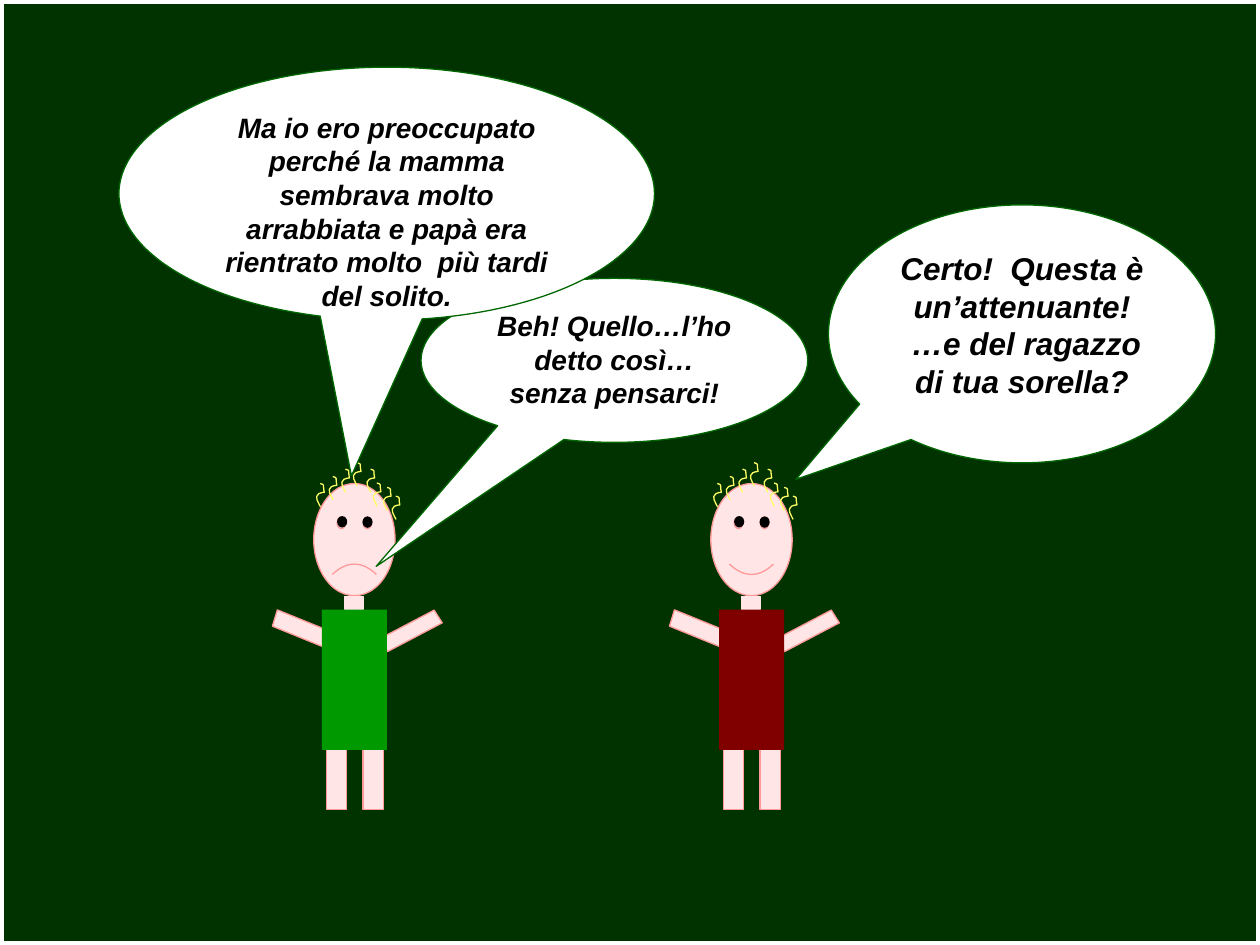
from lxml.etree import SubElement
from pptx import Presentation
from pptx.dml.color import RGBColor
from pptx.enum.shapes import MSO_SHAPE
from pptx.enum.text import MSO_ANCHOR, PP_ALIGN
from pptx.oxml.ns import qn
from pptx.util import Pt

THEME = {
    "background": "003300", "border": "FFFFFF", "skin": "FFE5E5", "skin_line": "FF9999",
    "eye": "000000", "hair": "FFFF66", "bubble": "FFFFFF", "bubble_line": "006600",
    "text": "000000", "green_shirt": "009900", "red_shirt": "800000",
    "font": "Arial", "large": 18, "medium": 16, "thin": 0.75, "thick": 4.5,
}

SLIDE_SIZE = (720, 540)

CHILDREN = [
    {"left": 166.9, "smile": -0.047, "shirt": "green_shirt"},
    {"left": 393.8, "smile": 0.047, "shirt": "red_shirt"},
]

BODY = [
    {"kind": MSO_SHAPE.PARALLELOGRAM, "box": (62.1, 342.9, 11.5, 35.3), "rotation": 57.6},
    {"kind": MSO_SHAPE.PARALLELOGRAM, "box": (0.1, 342.2, 13, 35.3), "rotation": 106.9},
    {"kind": MSO_SHAPE.RECTANGLE, "box": (19.6, 421.2, 11.6, 41.6)},
    {"kind": MSO_SHAPE.RECTANGLE, "box": (40.5, 421.2, 11.6, 41.6)},
    {"kind": MSO_SHAPE.SMILEY_FACE, "box": (12.4, 276.3, 46.5, 64.1)},
    {"kind": MSO_SHAPE.OVAL, "box": (40.2, 295.1, 5.8, 6.5), "fill": "eye", "line": None},
    {"kind": MSO_SHAPE.OVAL, "box": (25.7, 294.9, 5.8, 6.5), "fill": "eye", "line": None},
    {"kind": MSO_SHAPE.RECTANGLE, "box": (30, 340.9, 10.7, 7.2), "line": "skin"},
    {"kind": MSO_SHAPE.RECTANGLE, "box": (17.1, 348.3, 37.2, 80.2), "fill": "shirt", "line": None},
]

CURLS = [(12.4, 276.3), (19.6, 272.3), (41.2, 268.1), (44.8, 276),
         (33.4, 264.4), (55.6, 283.5), (50.6, 278.5), (26.8, 268.1)]
CURL = [(3.8, 13.3), (2.8, 11), (0, 7.6), (2.9, 5.8), (3.8, 5.2),
        (5, 5.2), (6, 5), (5, 0), (6.6, 1), (3.7, 0)]

BUBBLES = [
    {"box": (473.4, 117.1, 221.2, 147.4), "tail": (-0.584, 0.564), "size": "large",
     "text": ["Certo!  Questa è un’attenuante!", " …e del ragazzo di tua sorella?"]},
    {"box": (240.6, 159.1, 221, 93.7), "tail": (-0.616, 1.256), "size": "medium",
     "text": ["Beh! Quello…l’ho detto così…", "senza pensarci!"]},
    {"box": (68, 38.4, 306, 144.5), "tail": (-0.066, 1.116), "size": "medium",
     "text": ["Ma io ero preoccupato perché la mamma sembrava molto arrabbiata "
              "e papà era rientrato molto  più tardi del solito."]},
]


def color(name):
    return RGBColor.from_string(THEME[name])


def apply(target, values):
    for name, value in values.items():
        setattr(target, name, value)


def paint(shape, fill, line, width="thin"):
    shape.shadow.inherit = False
    for part, name in ((shape.fill, fill), (shape.line.fill, line)):
        if name is None:
            part.background()
        else:
            part.solid()
            part.fore_color.rgb = color(name)
    if line:
        shape.line.width = Pt(THEME[width])


def add_shape(shapes, kind, box, fill, line, width="thin"):
    shape = shapes.add_shape(kind, *map(Pt, box))
    paint(shape, fill, line, width)
    return shape


def bend(shape):
    lines = list(shape.element.iter(qn("a:lnTo")))
    outline = lines[0].getparent()
    for index, line in enumerate(lines):
        if index % 3 == 0:
            curve = SubElement(outline, qn("a:cubicBezTo"))
        curve.append(line[0])
        outline.remove(line)


def add_curl(shapes, left, top):
    points = [(Pt(left + x), Pt(top + y)) for x, y in CURL]
    builder = shapes.build_freeform(*points[0])
    builder.add_line_segments(points[1:], close=False)
    shape = builder.convert_to_shape()
    bend(shape)
    paint(shape, None, "hair")


def add_child(slide, child):
    shapes = slide.shapes.add_group_shape().shapes
    for part in BODY:
        left, *rest = part["box"]
        fill = part.get("fill", "skin")
        shape = add_shape(shapes, part["kind"], (child["left"] + left, *rest),
                          child.get(fill, fill), part.get("line", "skin_line"))
        shape.rotation = part.get("rotation", 0)
        if part["kind"] == MSO_SHAPE.SMILEY_FACE:
            shape.adjustments[0] = child["smile"]
    for left, top in CURLS:
        add_curl(shapes, child["left"] + left, top)


def add_bubble(slide, bubble):
    shape = add_shape(slide.shapes, MSO_SHAPE.OVAL_CALLOUT, bubble["box"],
                      "bubble", "bubble_line")
    for index, value in enumerate(bubble["tail"]):
        shape.adjustments[index] = value
    frame = shape.text_frame
    apply(frame, {"word_wrap": True, "vertical_anchor": MSO_ANCHOR.TOP})
    for index, text in enumerate(bubble["text"]):
        paragraph = frame.add_paragraph() if index else frame.paragraphs[0]
        paragraph.alignment = PP_ALIGN.CENTER
        run = paragraph.add_run()
        run.text = text
        apply(run.font, {"name": THEME["font"], "size": Pt(THEME[bubble["size"]]),
                         "bold": True, "italic": True})
        run.font.color.rgb = color("text")


def main():
    presentation = Presentation()
    width, height = map(Pt, SLIDE_SIZE)
    apply(presentation, {"slide_width": width, "slide_height": height})
    slide = presentation.slides.add_slide(presentation.slide_layouts[6])
    slide.background.fill.solid()
    slide.background.fill.fore_color.rgb = color("background")
    add_shape(slide.shapes, MSO_SHAPE.RECTANGLE, (0, 0, *SLIDE_SIZE), None, "border", "thick")
    for child in CHILDREN:
        add_child(slide, child)
    for bubble in BUBBLES:
        add_bubble(slide, bubble)
    presentation.save("out.pptx")


if __name__ == "__main__":
    main()
